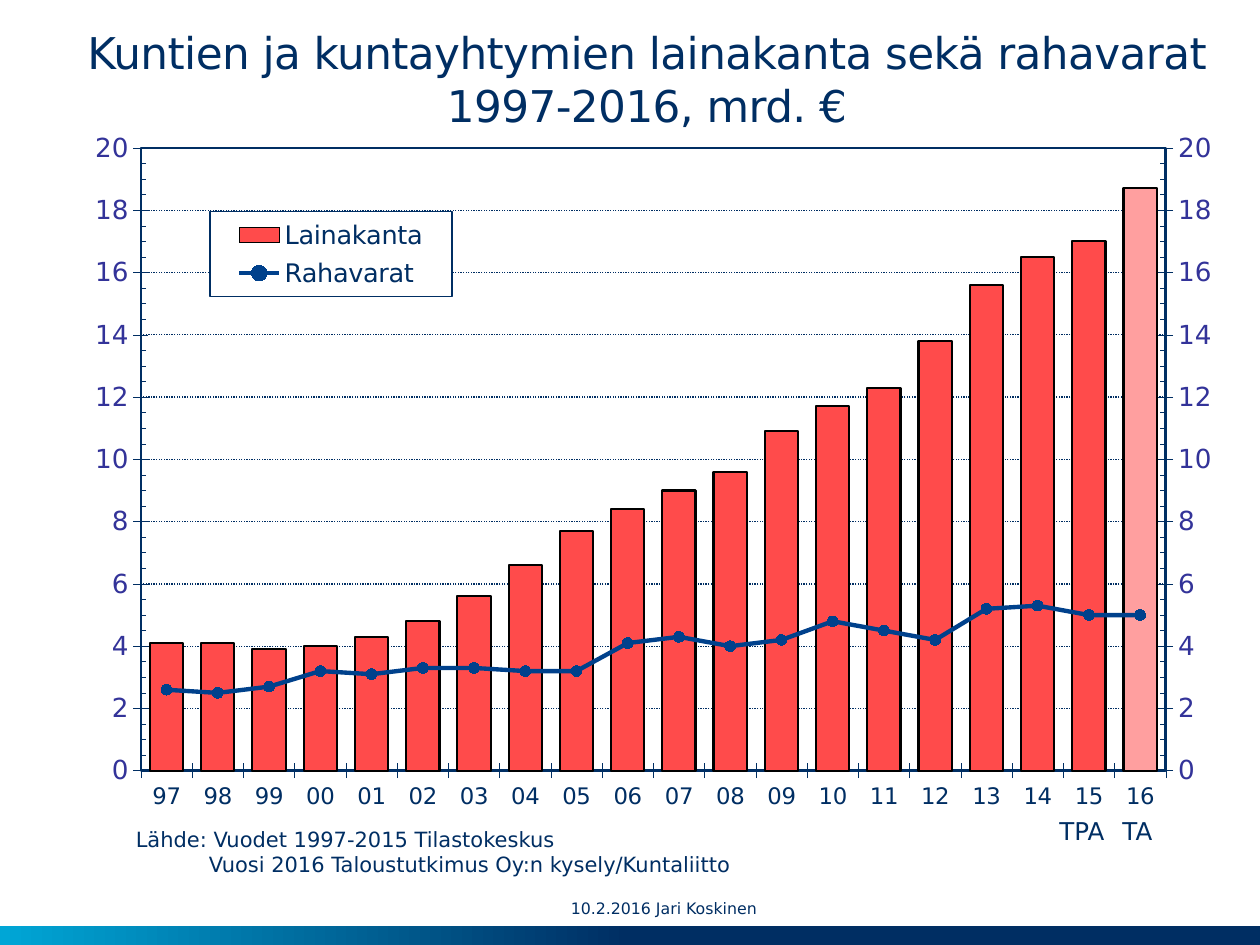
from copy import deepcopy
from dataclasses import dataclass

from lxml import etree
from pptx import Presentation
from pptx.chart.data import CategoryChartData
from pptx.dml.color import RGBColor
from pptx.enum.chart import XL_CHART_TYPE, XL_LEGEND_POSITION, XL_MARKER_STYLE, XL_TICK_MARK
from pptx.enum.dml import MSO_LINE
from pptx.enum.shapes import MSO_SHAPE
from pptx.enum.text import MSO_ANCHOR, PP_ALIGN
from pptx.oxml import parse_xml
from pptx.oxml.ns import nsdecls, qn
from pptx.util import Inches, Pt

COLUMNS, LINE_MARKERS = XL_CHART_TYPE.COLUMN_CLUSTERED, MSO_LINE.ROUND_DOT
COLUMN_CHART, DOTTED = COLUMNS, LINE_MARKERS
CROSS, INSIDE = XL_TICK_MARK.CROSS, XL_TICK_MARK.INSIDE
TOP, MIDDLE, BOTTOM = MSO_ANCHOR.TOP, MSO_ANCHOR.MIDDLE, MSO_ANCHOR.BOTTOM
LEFT, CENTER = PP_ALIGN.LEFT, PP_ALIGN.CENTER
WIDTH, HEIGHT = Inches(10), Inches(7.5)
GRID_COLUMNS, GRID_ROWS = 100, 75

YEARS = [f"{year % 100:02d}" for year in range(1997, 2017)]
LOANS = [4.1, 4.1, 3.9, 4, 4.3, 4.8, 5.6, 6.6, 7.7, 8.4,
         9, 9.6, 10.9, 11.7, 12.3, 13.8, 15.6, 16.5, 17, 18.7]
CASH = [2.6, 2.5, 2.7, 3.2, 3.1, 3.3, 3.3, 3.2, 3.2, 4.1,
        4.3, 4, 4.2, 4.8, 4.5, 4.2, 5.2, 5.3, 5, 5]


@dataclass(frozen=True)
class Theme:
    font: str = "DejaVu Sans"
    navy: str = "002E63"
    cyan: str = "00A6D6"
    scale: str = "333399"
    loans: str = "FF4B4B"
    forecast: str = "FF9F9F"
    cash: str = "00418C"
    outline: str = "000000"
    paper: str = "FFFFFF"
    title_size: float = 25
    scale_size: float = 15
    legend_size: float = 14.6
    note_size: float = 14
    year_size: float = 13
    source_size: float = 12
    footer_size: float = 9


class SlideBuilder:
    def __init__(self, slide, theme):
        self.slide, self.theme = slide, theme

    def place(self, column, row, columns, rows):
        """Turn grid columns and rows into slide lengths."""
        across, down = WIDTH / GRID_COLUMNS, HEIGHT / GRID_ROWS
        return [int(n) for n in (column * across, row * down, columns * across, rows * down)]

    def style_font(self, font, size, color):
        font.name, font.size, font.bold = self.theme.font, Pt(size), False
        font.color.rgb = RGBColor.from_string(color)

    def style_line(self, line, color, width):
        line.color.rgb = RGBColor.from_string(color)
        line.width = Pt(width)

    def style_fill(self, fill, color):
        fill.solid()
        fill.fore_color.rgb = RGBColor.from_string(color)

    def text(self, box, content, size, anchor=TOP, align=LEFT, insets=(0.1, 0.05),
             wrap=True, spacing=None):
        frame = self.slide.shapes.add_textbox(*self.place(*box)).text_frame
        frame.word_wrap, frame.vertical_anchor = wrap, anchor
        frame.margin_left = frame.margin_right = Inches(insets[0])
        frame.margin_top = frame.margin_bottom = Inches(insets[1])
        frame.text = content
        for paragraph in frame.paragraphs:
            paragraph.alignment = align
            for run in paragraph.runs:
                self.style_font(run.font, size, self.theme.navy)
                if spacing is not None:
                    run._r.get_or_add_rPr().set("spc", str(spacing))
        return frame

    def gradient_band(self, box):
        band = self.slide.shapes.add_shape(MSO_SHAPE.RECTANGLE, *self.place(*box))
        band.shadow.inherit = False
        band.line.fill.background()
        band.fill.gradient()
        band.fill.gradient_angle = 180
        stops = ((0.5, self.theme.navy), (1, self.theme.cyan))
        for stop, (position, color) in zip(band.fill.gradient_stops, stops):
            stop.position = position
            stop.color.rgb = RGBColor.from_string(color)

    def layout(self, x, y, w, h, inner=False):
        target = '<c:layoutTarget val="inner"/>' if inner else ""
        shares = "".join(f'<c:{tag} val="{share}"/>' for tag, share in zip("xywh", (x, y, w, h)))
        return parse_xml(
            f'<c:layout {nsdecls("c")}><c:manualLayout>{target}<c:xMode val="edge"/>'
            f'<c:yMode val="edge"/>{shares}</c:manualLayout></c:layout>')

    def frame_properties(self, width, fill):
        return parse_xml(
            f'<c:spPr {nsdecls("c", "a")}>{fill}<a:ln w="{Pt(width)}"><a:solidFill>'
            f'<a:srgbClr val="{self.theme.navy}"/></a:solidFill></a:ln></c:spPr>')

    def axis(self, axis, size, color):
        axis.major_tick_mark = CROSS
        self.style_font(axis.tick_labels.font, size, color)
        self.style_line(axis.format.line, self.theme.navy, 0.31)

    def line_on_right_axis(self, chart):
        """Move the second series to a line plot with its own value axis."""
        area = chart._chartSpace.chart.plotArea
        bars = area.find(qn("c:barChart"))
        series = bars.findall(qn("c:ser"))[1]
        for inverted in series.findall(qn("c:invertIfNegative")):
            series.remove(inverted)
        line = parse_xml(
            f'<c:lineChart {nsdecls("c")}><c:grouping val="standard"/><c:varyColors val="0"/>'
            '<c:marker val="1"/><c:axId val="5001"/><c:axId val="5002"/></c:lineChart>')
        line.insert(2, series)
        bars.addnext(line)

        years, values = area.find(qn("c:catAx")), area.find(qn("c:valAx"))
        right_values, hidden_years = deepcopy(values), deepcopy(years)
        for axis, own, other in ((hidden_years, "5001", "5002"), (right_values, "5002", "5001")):
            axis.find(qn("c:axId")).set("val", own)
            axis.find(qn("c:crossAx")).set("val", other)
        hidden_years.find(qn("c:delete")).set("val", "1")
        right_values.find(qn("c:axPos")).set("val", "r")
        right_values.find(qn("c:crosses")).set("val", "max")
        right_values.remove(right_values.find(qn("c:majorGridlines")))
        values.addnext(right_values)
        right_values.addnext(hidden_years)

    def combined_chart(self, box, plot_box, legend_box):
        theme = self.theme
        data = CategoryChartData(number_format="0.0")
        data.categories = YEARS
        data.add_series("Lainakanta", LOANS)
        data.add_series("Rahavarat", CASH)
        chart = self.slide.shapes.add_chart(COLUMN_CHART, *self.place(*box), data).chart
        chart.has_title = False
        self.style_font(chart.font, theme.year_size, theme.navy)

        # Axes
        self.axis(chart.category_axis, theme.year_size, theme.navy)
        scale = chart.value_axis
        self.axis(scale, theme.scale_size, theme.scale)
        scale.minimum_scale, scale.maximum_scale = 0, 20
        scale.major_unit, scale.minor_unit = 2, 0.5
        scale.minor_tick_mark = INSIDE
        scale.tick_labels.number_format = "0"
        scale.tick_labels.number_format_is_linked = False
        gridline = scale.major_gridlines.format.line
        self.style_line(gridline, theme.navy, 0.75)
        gridline.dash_style = DOTTED

        # Series
        self.line_on_right_axis(chart)
        bars, line = chart.plots
        bars.gap_width, bars.vary_by_categories = 54, False
        loans, cash = bars.series[0], line.series[0]
        for part, color in ((loans, theme.loans), (loans.points[len(YEARS) - 1], theme.forecast)):
            self.style_fill(part.format.fill, color)
            self.style_line(part.format.line, theme.outline, 1.25)
        cash.smooth = False
        self.style_line(cash.format.line, theme.cash, 2.5)
        cash.marker.style, cash.marker.size = XL_MARKER_STYLE.CIRCLE, 6
        self.style_fill(cash.marker.format.fill, theme.cash)
        self.style_line(cash.marker.format.line, theme.cash, 0.75)

        # Plot frame and legend
        area = chart._chartSpace.chart.plotArea
        for automatic in area.findall(qn("c:layout")):
            area.remove(automatic)
        area.insert(0, self.layout(*plot_box, inner=True))
        area.append(self.frame_properties(1.5, "<a:noFill/>"))
        chart.has_legend = True
        legend = chart.legend
        legend.position, legend.include_in_layout = XL_LEGEND_POSITION.RIGHT, False
        self.style_font(legend.font, theme.legend_size, theme.navy)
        element = legend._element
        for automatic in element.findall(qn("c:layout")):
            element.remove(automatic)
        element.find(qn("c:legendPos")).addnext(self.layout(*legend_box))
        paper = f'<a:solidFill><a:srgbClr val="{theme.paper}"/></a:solidFill>'
        element.find(qn("c:overlay")).addnext(self.frame_properties(0.75, paper))


def main():
    deck = Presentation()
    deck.slide_width, deck.slide_height = WIDTH, HEIGHT
    theme = Theme()
    page = SlideBuilder(deck.slides.add_slide(deck.slide_layouts[6]), theme)

    # Band and title
    page.gradient_band((0, 73.5, 100, 1.5))
    page.text((4.3, 2.1, 94.1, 8.8),
              "Kuntien ja kuntayhtymien lainakanta sekä rahavarat\v1997-2016, mrd. €",
              theme.title_size, BOTTOM, CENTER, insets=(0, 0.05), spacing=-30)

    # Loans and cash by year
    page.combined_chart((5.7, 10.5, 91.4, 56.3), (0.06, 0.02, 0.89, 0.88),
                        (0.12, 0.11, 0.21, 0.12))

    # Source, footer and year notes
    source = page.text((9.8, 65.1, 56.7, 5),
                       "Lähde: Vuodet 1997-2015 Tilastokeskus\n"
                       "Vuosi 2016 Taloustutkimus Oy:n kysely/Kuntaliitto", theme.source_size)
    source.paragraphs[1]._p.get_or_add_pPr().set("marL", str(Inches(0.58)))
    page.text((45.3, 70.6, 26.1, 2.9), "10.2.2016 Jari Koskinen",
              theme.footer_size, MIDDLE, insets=(0, 0))
    for column, columns, note in ((88.1, 4.5, "TA"), (83.1, 5.7, "TPA")):
        page.text((column, 64.3, columns, 3.4), note, theme.note_size, wrap=False)

    deck.save("out.pptx")


if __name__ == "__main__":
    main()
